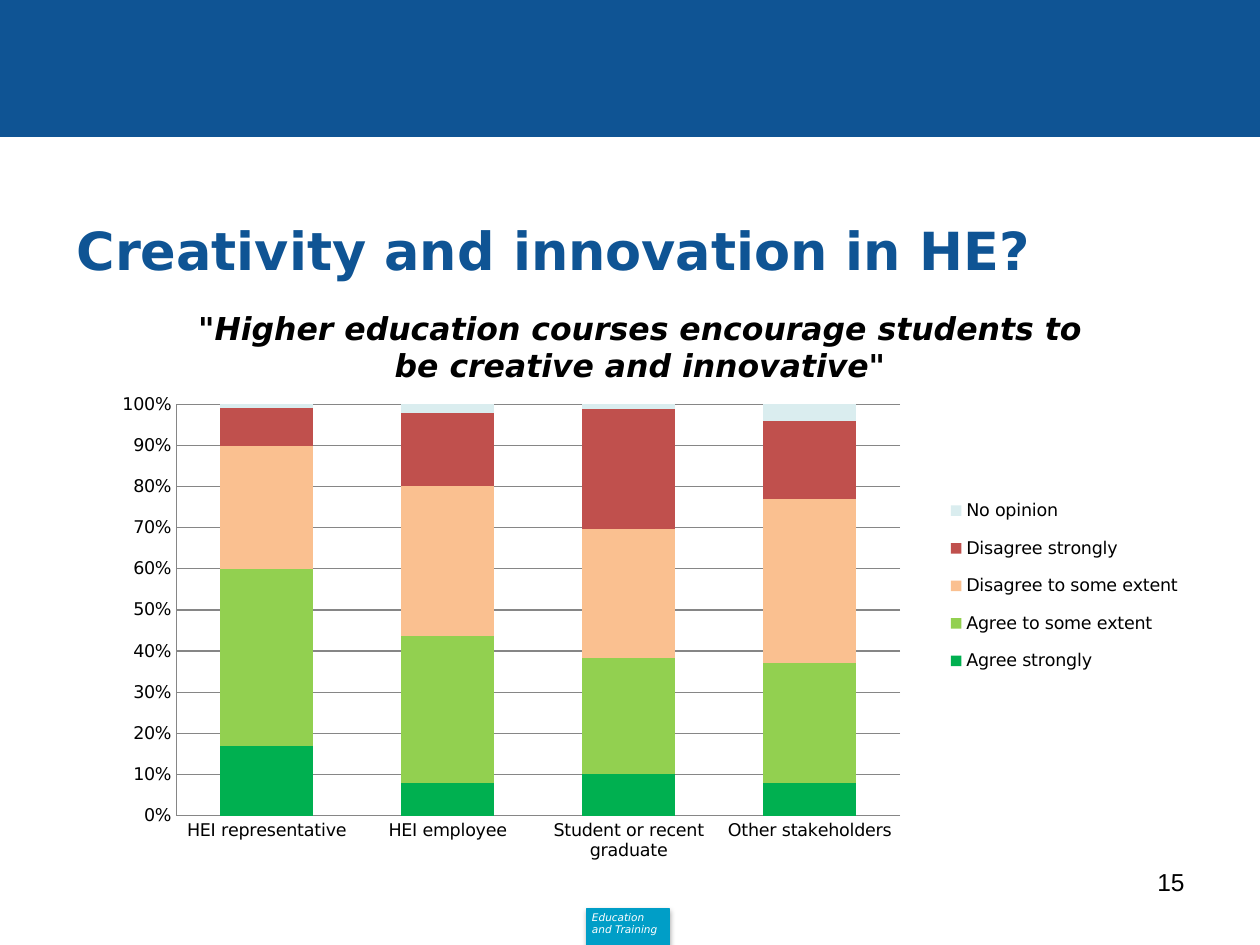
from lxml import etree
from pptx import Presentation
from pptx import util as u
from pptx.chart.data import CategoryChartData
from pptx.dml.color import RGBColor
from pptx.enum import chart as ch, shapes, text
from pptx.oxml import parse_xml
from pptx.oxml.ns import nsdecls, qn

Inches, Pt = u.Inches, u.Pt
BLUE, CYAN, WHITE, BLACK, GREY = "0F5494", "009EC7", "FFFFFF", "000000", "868686"


def color(value):
    return RGBColor.from_string(value)


def set_layout(element, x, y, width, height, inner=False):
    """Give a chart part a fixed place, as fractions of the chart."""
    layout = element.find(qn("c:layout"))
    if layout is None:
        layout = etree.Element(qn("c:layout"))
        position = element.find(qn("c:legendPos"))
        if position is None:
            element.insert(0, layout)
        else:
            position.addnext(layout)
    manual = etree.SubElement(layout, qn("c:manualLayout"))
    settings = [("xMode", "edge"), ("yMode", "edge"),
                ("x", x), ("y", y), ("w", width), ("h", height)]
    if inner:
        settings.insert(0, ("layoutTarget", "inner"))
    for name, value in settings:
        etree.SubElement(manual, qn("c:" + name)).set("val", str(value))


presentation = Presentation()
presentation.slide_width, presentation.slide_height = Inches(10), Inches(7.5)
slide = presentation.slides.add_slide(presentation.slide_layouts[6])

# Header band and footer tag
for left, top, width, height, fill in [(0, 0, 10, 1.08, BLUE),
                                       (4.66, 7.21, 0.65, 0.3, CYAN)]:
    shape = slide.shapes.add_shape(shapes.MSO_SHAPE.RECTANGLE, Inches(left),
                                   Inches(top), Inches(width), Inches(height))
    shape.shadow.inherit = False
    shape.fill.solid()
    shape.fill.fore_color.rgb = color(fill)
    shape.line.color.rgb = color(fill)
    shape.line.width = Pt(0.75)

# Soft shadow under the footer tag
shape._element.spPr.find(qn("a:effectLst")).append(parse_xml(
    f'<a:outerShdw {nsdecls("a")} blurRad="{Pt(3.1)}" dist="{Pt(1.8)}" '
    'dir="5400000" rotWithShape="0"><a:srgbClr val="000000">'
    '<a:alpha val="35000"/></a:srgbClr></a:outerShdw>'))

# Footer label, title and slide number
labels = [
    (4.6, 7.18, 0.83, 0.27, ["Education", "and Training"], 6, "DejaVu Sans",
     WHITE, False, True, text.PP_ALIGN.LEFT, text.MSO_ANCHOR.TOP),
    (0.51, 1.47, 9, 1.02, ["Creativity and innovation in HE?"], 30, "DejaVu Sans",
     BLUE, True, False, text.PP_ALIGN.LEFT, text.MSO_ANCHOR.MIDDLE),
    (7.17, 6.83, 2.33, 0.52, ["15"], 14, "Arial",
     BLACK, False, False, text.PP_ALIGN.RIGHT, text.MSO_ANCHOR.TOP),
]
for (left, top, width, height, lines, size, font_name,
     font_color, bold, italic, alignment, anchor) in labels:
    box = slide.shapes.add_textbox(Inches(left), Inches(top),
                                   Inches(width), Inches(height))
    frame = box.text_frame
    frame.word_wrap = True
    frame.vertical_anchor = anchor
    paragraph = frame.paragraphs[0]
    paragraph.alignment = alignment
    for index, line in enumerate(lines):
        if index:
            paragraph.add_line_break()
        run = paragraph.add_run()
        run.text = line
        run.font.size = Pt(size)
        run.font.name = font_name
        run.font.bold = bold
        run.font.italic = italic
        run.font.color.rgb = color(font_color)

# Survey answers, in percent
series_data = [
    ("Agree strongly", (17, 8, 10, 8), "00B050"),
    ("Agree to some extent", (43, 36, 28, 29), "92D050"),
    ("Disagree to some extent", (30, 37, 31, 40), "FAC090"),
    ("Disagree strongly", (9, 18, 29, 19), "C0504D"),
    ("No opinion", (1, 2, 1, 4), "DAEDEF"),
]
chart_data = CategoryChartData()
chart_data.categories = ["HEI representative", "HEI employee",
                         "Student or recent graduate", "Other stakeholders"]
for name, values, _ in series_data:
    chart_data.add_series(name, values)
chart = slide.shapes.add_chart(
    ch.XL_CHART_TYPE.COLUMN_STACKED_100, Inches(0.59), Inches(2.25),
    Inches(8.98), Inches(4.8), chart_data).chart
chart.font.size = Pt(10)
chart.font.name = "DejaVu Sans"
chart.font.color.rgb = color(BLACK)

# Chart title
chart.has_title = True
run = chart.chart_title.text_frame.paragraphs[0].add_run()
run.text = '"Higher education courses encourage students to be creative and innovative"'
run.font.size = Pt(18)
run.font.name = "DejaVu Sans"
run.font.bold = run.font.italic = True
run.font.color.rgb = color(BLACK)
chart.chart_title.include_in_layout = False

# Columns
plot = chart.plots[0]
plot.gap_width, plot.overlap = 95, 100
plot.vary_by_categories = False
for series, (_, _, fill) in zip(plot.series, series_data):
    series.format.fill.solid()
    series.format.fill.fore_color.rgb = color(fill)

# Axes and gridlines
value_axis = chart.value_axis
value_axis.minimum_scale, value_axis.maximum_scale = 0, 1
value_axis.major_unit = 0.1
value_axis.has_major_gridlines = True
value_axis.tick_labels.number_format = "0%"
value_axis.tick_labels.number_format_is_linked = False
for axis in (chart.category_axis, value_axis):
    axis.major_tick_mark = axis.minor_tick_mark = ch.XL_TICK_MARK.NONE
for line_owner in (chart.category_axis, value_axis, value_axis.major_gridlines):
    line_owner.format.line.color.rgb = color(GREY)
    line_owner.format.line.width = Pt(0.75)

# Legend and plot area
chart.has_legend = True
chart.legend.position = ch.XL_LEGEND_POSITION.RIGHT
chart.legend.include_in_layout = False
set_layout(chart.legend._element, 0.76, 0.33, 0.23, 0.34)
set_layout(chart._chartSpace.chart.plotArea, 0.09, 0.2, 0.64, 0.68, inner=True)

presentation.save("out.pptx")
